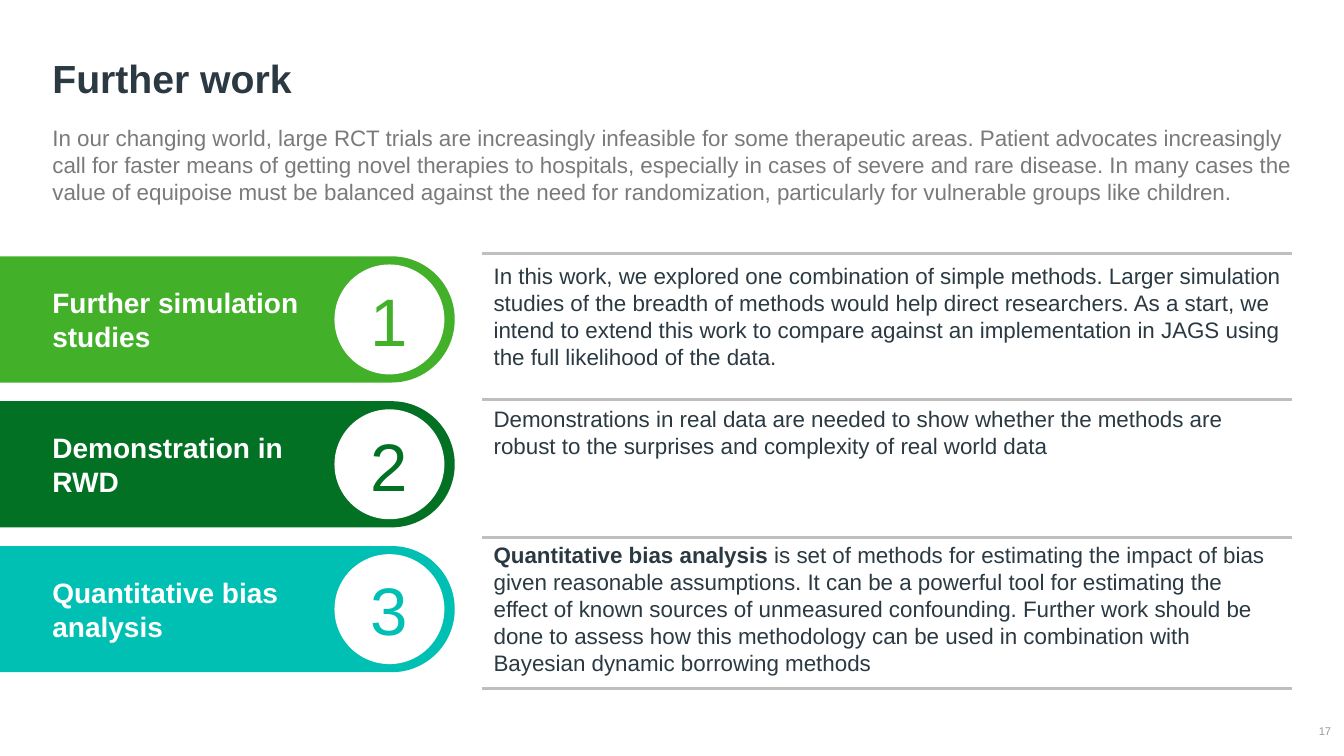
from dataclasses import dataclass

from lxml import etree
from pptx import Presentation
from pptx.dml.color import RGBColor
from pptx.enum.shapes import MSO_CONNECTOR, MSO_SHAPE
from pptx.enum.text import MSO_ANCHOR, MSO_AUTO_SIZE, PP_ALIGN
from pptx.oxml.ns import qn
from pptx.util import Cm, Pt

STRAIGHT = MSO_CONNECTOR.STRAIGHT
ROUNDED_END = MSO_SHAPE.ROUND_2_SAME_RECTANGLE
OVAL = MSO_SHAPE.OVAL
TOP, MIDDLE, BOTTOM = MSO_ANCHOR.TOP, MSO_ANCHOR.MIDDLE, MSO_ANCHOR.BOTTOM
LEFT, CENTER, RIGHT = PP_ALIGN.LEFT, PP_ALIGN.CENTER, PP_ALIGN.RIGHT
NO_FIT = MSO_AUTO_SIZE.NONE


@dataclass(frozen=True)
class Theme:
    font: str = "Arial"
    ink: str = "2B3A42"
    intro: str = "7A7A7A"
    rule: str = "BFBFBF"
    page_number: str = "959CA0"
    white: str = "FFFFFF"
    green: str = "43B02A"
    dark_green: str = "027123"
    teal: str = "00BFB3"
    title_size: float = 28
    label_size: float = 20
    body_size: float = 16
    number_size: float = 48
    page_number_size: float = 8
    rule_width: float = 2.25


THEME = Theme()


@dataclass(frozen=True)
class Span:
    text: str
    size: float
    color: str
    bold: bool = False


@dataclass(frozen=True)
class Frame:
    """Left, top, width and height in centimetres."""
    left: float
    top: float
    width: float
    height: float

    def lengths(self) -> tuple:
        return Cm(self.left), Cm(self.top), Cm(self.width), Cm(self.height)


@dataclass(frozen=True)
class Topic:
    label: str
    color: str
    text_middle: float
    spans: tuple


def body_span(text: str, bold: bool = False) -> Span:
    return Span(text, THEME.body_size, THEME.ink, bold)


TOPICS = (
    Topic("Further simulation studies", THEME.green, 7.96, (body_span(
        "In this work, we explored one combination of simple methods. Larger simulation "
        "studies of the breadth of methods would help direct researchers. As a start, we "
        "intend to extend this work to compare against an implementation in JAGS using "
        "the full likelihood of the data."),)),
    Topic("Demonstration in RWD", THEME.dark_green, 10.88, (body_span(
        "Demonstrations in real data are needed to show whether the methods are robust "
        "to the surprises and complexity of real world data"),)),
    Topic("Quantitative bias analysis", THEME.teal, 15.33, (
        body_span("Quantitative bias analysis", bold=True),
        body_span(
            " is set of methods for estimating the impact of bias given reasonable "
            "assumptions. It can be a powerful tool for estimating the effect of known "
            "sources of unmeasured confounding. Further work should be done to assess how "
            "this methodology can be used in combination with Bayesian dynamic borrowing "
            "methods"))),
)
INTRO = (
    "In our changing world, large RCT trials are increasingly infeasible for some "
    "therapeutic areas. Patient advocates increasingly call for faster means of getting "
    "novel therapies to hospitals, especially in cases of severe and rare disease. In many "
    "cases the value of equipoise must be balanced against the need for randomization, "
    "particularly for vulnerable groups like children.")

MARGIN = 1.07
FIRST_MIDDLE, PITCH = 8.05, 3.65
BAND_LENGTH, BAND_HEIGHT = 11.46, 3.18
CIRCLE_LEFT, CIRCLE_SIZE = 8.43, 2.77
LABEL_WIDTH, LABEL_HEIGHT = 7.16, 2.62
TEXT_LEFT, TEXT_WIDTH, TEXT_HEIGHT = 12.14, 20.42, 2.77
RULE_TOPS = (6.38, 10.06, 13.54, 17.35)
SIDE_INSET, END_INSET = 0.25, 0.13


def write(shape, spans: tuple, anchor=MIDDLE, align=LEFT,
          insets: tuple = (SIDE_INSET, END_INSET, SIDE_INSET, END_INSET)):
    """Put one paragraph of spans in the shape and return the paragraph."""
    text = shape.text_frame
    text.word_wrap = True
    text.auto_size = NO_FIT
    text.vertical_anchor = anchor
    text.margin_left, text.margin_top, text.margin_right, text.margin_bottom = map(Cm, insets)
    para = text.paragraphs[0]
    para.alignment = align
    para.space_before = Pt(0)
    for span in spans:
        run = para.add_run()
        run.text = span.text
        run.font.name = THEME.font
        run.font.size = Pt(span.size)
        run.font.bold = span.bold
        run.font.color.rgb = RGBColor.from_string(span.color)
    return para


def place(shape, frame: Frame) -> None:
    shape.left, shape.top, shape.width, shape.height = frame.lengths()


def add_box(page, frame: Frame, spans: tuple, **layout) -> None:
    write(page.shapes.add_textbox(*frame.lengths()), spans, **layout)


def add_filled(page, kind, frame: Frame, color: str):
    shape = page.shapes.add_shape(kind, *frame.lengths())
    shape.shadow.inherit = False
    shape.fill.solid()
    shape.fill.fore_color.rgb = RGBColor.from_string(color)
    shape.line.fill.background()
    return shape


def add_rule(page, top: float) -> None:
    rule = page.shapes.add_connector(
        STRAIGHT, Cm(TEXT_LEFT + TEXT_WIDTH), Cm(top), Cm(TEXT_LEFT), Cm(top))
    rule.line.color.rgb = RGBColor.from_string(THEME.rule)
    rule.line.width = Pt(THEME.rule_width)
    etree.SubElement(rule._element.spPr, qn("a:effectLst"))


def add_topic(page, number: int, topic: Topic) -> None:
    middle = FIRST_MIDDLE + (number - 1) * PITCH
    # The band is an upright shape turned a quarter, so its frame is upright too.
    band = add_filled(page, ROUNDED_END, Frame(
        (BAND_LENGTH - BAND_HEIGHT) / 2, middle - BAND_LENGTH / 2,
        BAND_HEIGHT, BAND_LENGTH), topic.color)
    band.rotation = 90
    band.adjustments[0], band.adjustments[1] = 0.5, 0
    add_box(page, Frame(MARGIN, middle - LABEL_HEIGHT / 2, LABEL_WIDTH, LABEL_HEIGHT),
            (Span(topic.label, THEME.label_size, THEME.white, True),))
    circle = add_filled(page, OVAL, Frame(
        CIRCLE_LEFT, middle - CIRCLE_SIZE / 2, CIRCLE_SIZE, CIRCLE_SIZE), THEME.white)
    write(circle, (Span(str(number), THEME.number_size, topic.color),), align=CENTER)
    add_box(page, Frame(TEXT_LEFT, topic.text_middle - TEXT_HEIGHT / 2,
                        TEXT_WIDTH, TEXT_HEIGHT),
            topic.spans, insets=(0.3, END_INSET, SIDE_INSET, END_INSET))


def add_heading(page) -> None:
    title, body = page.placeholders
    place(title, Frame(MARGIN, 0.58, 31.5, 2.13))
    para = write(title, (Span("Further work", THEME.title_size, THEME.ink, True),),
                 anchor=BOTTOM)
    para.line_spacing = 0.9

    place(body, Frame(MARGIN, 3, 32.44, 2.31))
    para = write(body, (Span(INTRO, THEME.body_size, THEME.intro),), anchor=TOP)
    properties = para._p.get_or_add_pPr()
    properties.set("marL", "0")
    properties.set("indent", "0")
    etree.SubElement(properties, qn("a:buNone"))


def main() -> None:
    deck = Presentation()
    deck.slide_width, deck.slide_height = Cm(33.87), Cm(19.05)
    page = deck.slides.add_slide(deck.slide_layouts[1])
    add_heading(page)
    for top in RULE_TOPS:
        add_rule(page, top)
    for number, topic in enumerate(TOPICS, start=1):
        add_topic(page, number, topic)
    add_box(page, Frame(32.56, 18.19, 0.99, 0.48),
            (Span("17", THEME.page_number_size, THEME.page_number),),
            align=RIGHT, insets=(0, 0, 0, 0))
    deck.save("out.pptx")


if __name__ == "__main__":
    main()
